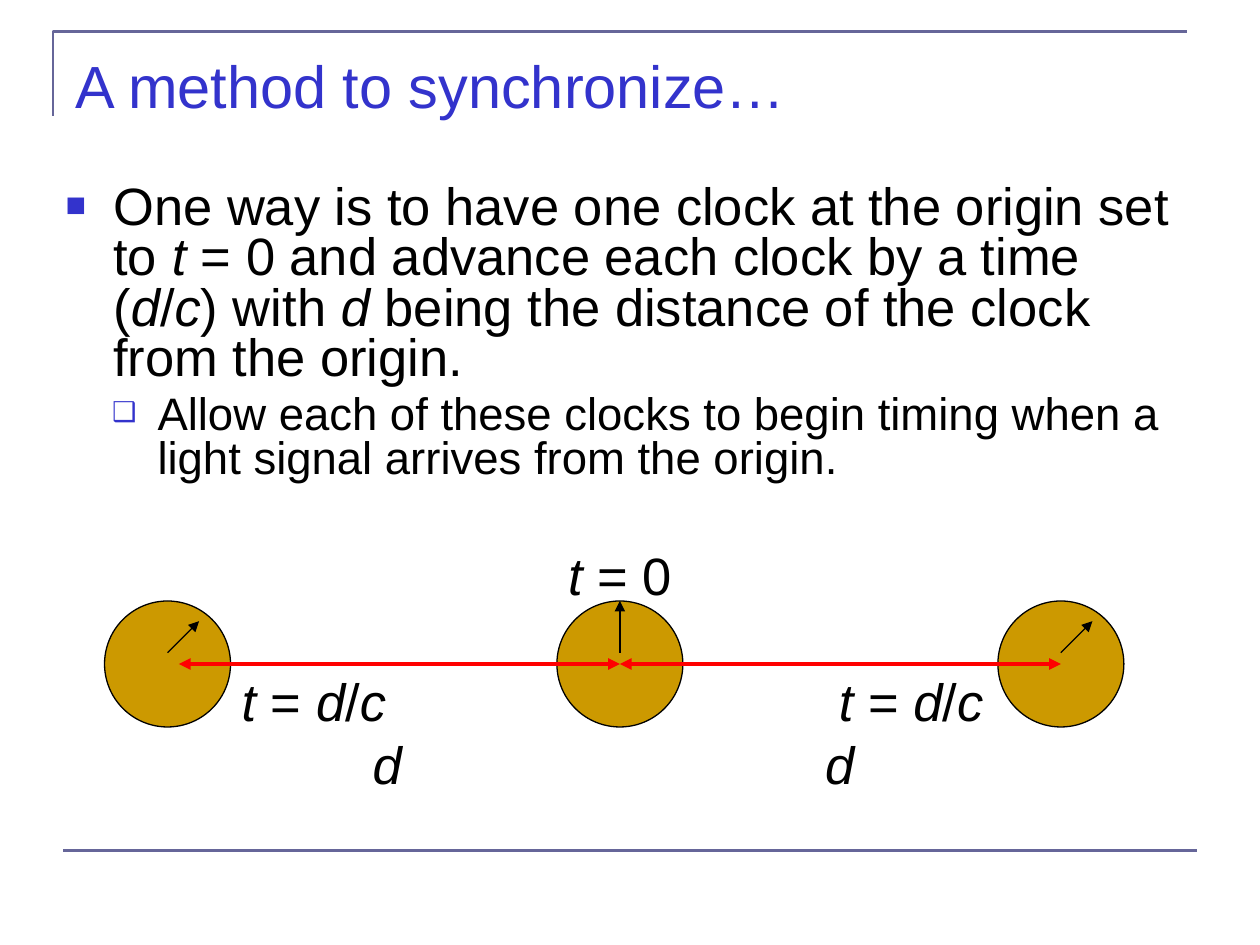
from pptx import Presentation
from pptx.dml.color import RGBColor
from pptx.enum.shapes import MSO_CONNECTOR as Connector, MSO_SHAPE as Shape
from pptx.enum.text import MSO_ANCHOR as Anchor, MSO_AUTO_SIZE as AutoSize, PP_ALIGN as Align
from pptx.oxml.ns import qn
from pptx.util import Inches, Pt
from lxml.etree import SubElement

TITLE = "A method to synchronize…"
BODY = [
    {"text": "One way is to have one clock at the origin set to *t* = 0 and advance each clock "
             "by a time (*d*/*c*) with *d* being the distance of the clock from the origin.",
     "size": 30, "bullet": "■", "bullet_size": 65, "margin": 0.38, "indent": -0.38},
    {"text": "Allow each of these clocks to begin timing when a light signal arrives "
             "from the origin.",
     "size": 26, "bullet": "❑", "bullet_size": 60, "margin": 0.73, "indent": -0.36},
]
LABELS = [
    {"text": "*t* = 0", "align": Align.CENTER, "before": 0, "tabs": []},
    {"text": "\t*t* = *d*/*c*\t*t* = *d*/*c*", "align": Align.LEFT, "before": 36,
     "tabs": [1.44, 6.18]},
    {"text": "\t*d*\t*d*", "align": Align.LEFT, "before": 0, "tabs": [2.48, 6.07]},
]
CLOCKS = [(4.92, 0, -0.41), (1.33, 0.25, -0.25), (8.42, 0.25, -0.25)]
DISTANCES = [(4.92, 8.42), (1.42, 4.92)]
CLOCK_Y, HAND_Y, DIAMETER = 5.27, 5.18, 1
BLACK, BLUE, RULE, GOLD, RED = "000000", "3333CC", "666699", "CC9900", "FF0000"


def color(value):
    return RGBColor.from_string(value)


def place(shape, *box):
    for name, value in zip(("left", "top", "width", "height"), box):
        setattr(shape, name, Inches(value))


def set_line(shape, value, width):
    shape.line.color.rgb = color(value)
    shape.line.width = Pt(width)


def set_frame(frame, anchor):
    settings = {"word_wrap": True, "auto_size": AutoSize.NONE, "vertical_anchor": anchor}
    for name, value in settings.items():
        setattr(frame, name, value)


def write(paragraph, text, size, value=BLACK):
    for index, part in enumerate(text.split("*")):
        if part:
            run = paragraph.add_run()
            run.text = part
            formats = {"name": "Arial", "size": Pt(size), "italic": index % 2 == 1}
            for name, setting in formats.items():
                setattr(run.font, name, setting)
            run.font.color.rgb = color(value)


def paragraphs(frame, items):
    for index, item in enumerate(items):
        yield (frame.add_paragraph() if index else frame.paragraphs[0]), item


def add_bullet(paragraph, item):
    properties = paragraph._p.get_or_add_pPr()
    properties.set("marL", str(Inches(item["margin"])))
    properties.set("indent", str(Inches(item["indent"])))
    SubElement(SubElement(properties, qn("a:buClr")), qn("a:srgbClr"), val=BLUE)
    SubElement(properties, qn("a:buSzPct"), val=str(item["bullet_size"] * 1000))
    SubElement(properties, qn("a:buFont"), typeface="Arial")
    SubElement(properties, qn("a:buChar"), char=item["bullet"])


def add_line(slide, start, end, value, width, arrows=()):
    line = slide.shapes.add_connector(Connector.STRAIGHT, *map(Inches, start + end))
    set_line(line, value, width)
    for arrow in arrows:
        SubElement(line.line._get_or_add_ln(), qn(arrow), type="triangle")
    SubElement(line._element.spPr, qn("a:effectLst"))


def add_rules(slide):
    builder = slide.shapes.build_freeform(Inches(0.42), Inches(0.92))
    corner = [(Inches(0.42), Inches(0.25)), (Inches(9.42), Inches(0.25))]
    builder.add_line_segments(corner, close=False)
    frame = builder.convert_to_shape()
    frame.fill.background()
    frame.shadow.inherit = False
    set_line(frame, RULE, 1.5)
    add_line(slide, (0.5, 6.75), (9.5, 6.75), RULE, 1.5)


def add_text(slide):
    title, body = slide.placeholders
    place(title, 0.5, 0.3, 9, 0.75)
    set_frame(title.text_frame, Anchor.MIDDLE)
    heading = title.text_frame.paragraphs[0]
    heading.alignment = Align.LEFT
    write(heading, TITLE, 34, BLUE)

    place(body, 0.42, 1.42, 9, 4.92)
    set_frame(body.text_frame, Anchor.TOP)
    for level, (paragraph, item) in enumerate(paragraphs(body.text_frame, BODY)):
        paragraph.level = level
        paragraph.line_spacing = 0.8
        paragraph.space_before = Pt(item["size"] * 0.2)
        add_bullet(paragraph, item)
        write(paragraph, item["text"], item["size"])


def add_labels(slide):
    box = slide.shapes.add_textbox(*map(Inches, (0.38, 4.26, 9.08, 2.1)))
    set_frame(box.text_frame, Anchor.TOP)
    for paragraph, item in paragraphs(box.text_frame, LABELS):
        paragraph.alignment = item["align"]
        paragraph.line_spacing = Pt(36)
        paragraph.space_before = Pt(item["before"])
        if item["tabs"]:
            stops = SubElement(paragraph._p.get_or_add_pPr(), qn("a:tabLst"))
            for stop in item["tabs"]:
                SubElement(stops, qn("a:tab"), pos=str(Inches(stop)), algn="l")
        write(paragraph, item["text"], 30)


def add_clocks(slide):
    radius = DIAMETER / 2
    for x, _, _ in CLOCKS:
        box = (x - radius, CLOCK_Y - radius, DIAMETER, DIAMETER)
        clock = slide.shapes.add_shape(Shape.OVAL, *map(Inches, box))
        clock.shadow.inherit = False
        clock.fill.solid()
        clock.fill.fore_color.rgb = color(GOLD)
        set_line(clock, BLACK, 0.75)
    for x, across, down in CLOCKS:
        add_line(slide, (x, HAND_Y), (x + across, HAND_Y + down), BLACK, 0.75, ["a:tailEnd"])
    for start, end in DISTANCES:
        add_line(slide, (start, CLOCK_Y), (end, CLOCK_Y), RED, 2.25, ["a:headEnd", "a:tailEnd"])


def main():
    presentation = Presentation()
    presentation.slide_width, presentation.slide_height = Inches(10), Inches(7.5)
    slide = presentation.slides.add_slide(presentation.slide_layouts[1])
    add_rules(slide)
    add_labels(slide)
    add_text(slide)
    add_clocks(slide)
    presentation.save("out.pptx")


if __name__ == "__main__":
    main()
